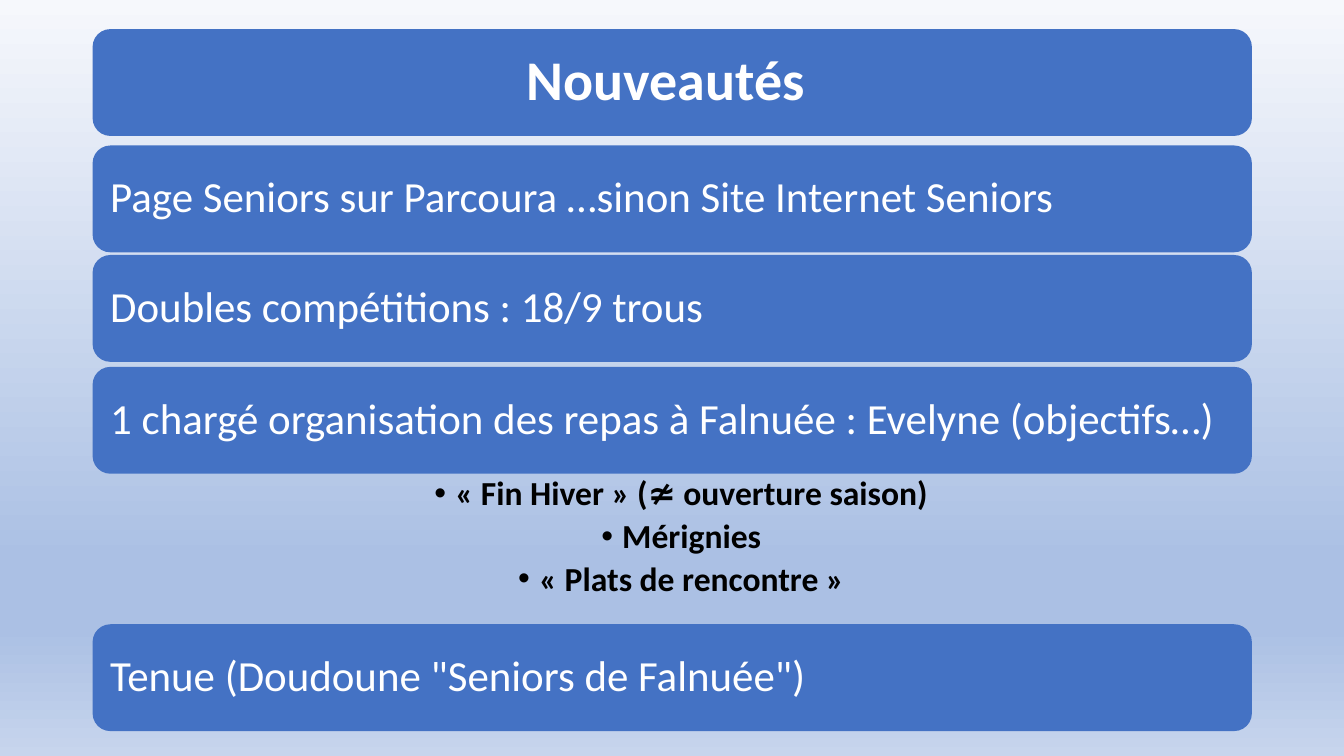
from dataclasses import dataclass

from lxml.etree import SubElement
from pptx import Presentation
from pptx.dml.color import RGBColor as Rgb
from pptx.enum.shapes import MSO_SHAPE as Preset
from pptx.enum.text import MSO_ANCHOR as Anchor, MSO_AUTO_SIZE as AutoSize, PP_ALIGN as Align
from pptx.oxml.ns import qn
from pptx.util import Cm, Pt


@dataclass(frozen=True)
class Theme:
    """Colours, font and type sizes of the slide."""
    font: str = "Calibri"
    band: str = "4472C4"
    light: str = "FFFFFF"
    dark: str = "000000"
    title_size: int = 60
    band_size: int = 46
    detail_size: int = 36
    backdrop: tuple = ((0, "F6F8FC"), (74, "ABC0E4"), (83, "ABC0E4"), (100, "C7D5ED"))


THEME = Theme()
LEFT, WIDTH, BAND_HEIGHT = Cm(3.5), Cm(43.82), Cm(4.04)


def paint_backdrop(slide):
    """Fill the slide background with the vertical theme gradient."""
    fill = slide.background.fill
    fill.gradient()
    fill.gradient_angle = 270
    stops = slide.element.find(".//" + qn("a:gsLst"))
    for stop in list(stops):
        stops.remove(stop)
    for percent, colour in THEME.backdrop:
        stop = SubElement(stops, qn("a:gs"), pos=str(percent * 1000))
        SubElement(stop, qn("a:srgbClr"), val=colour)


def place(shape, top, height):
    """Give a shape the common column's left edge and width."""
    shape.left, shape.top, shape.width, shape.height = LEFT, Cm(top), WIDTH, height


def write(shape, lines, *, size, colour, bold=False, align=Align.LEFT,
          anchor=Anchor.MIDDLE, insets=(0.47, 0.47, 0.47, 0.47), after=0, bulleted=False):
    """Write paragraphs in a shape; insets run left, top, right, bottom in cm."""
    frame = shape.text_frame
    frame.text = "\n".join(lines)
    frame.word_wrap = True
    frame.auto_size = AutoSize.NONE
    frame.vertical_anchor = anchor
    (frame.margin_left, frame.margin_top,
     frame.margin_right, frame.margin_bottom) = map(Cm, insets)
    for paragraph in frame.paragraphs:
        paragraph.alignment = align
        paragraph.line_spacing = 0.9
        paragraph.space_before = Pt(0)
        paragraph.space_after = Pt(after)
        if bulleted:
            paragraph.level = 1
            add_bullet(paragraph)
        for run in paragraph.runs:
            run.font.name = THEME.font
            run.font.size = Pt(size)
            run.font.bold = bold
            run.font.color.rgb = Rgb.from_string(colour)


def add_bullet(paragraph):
    """Give a paragraph a round bullet with a hanging indent."""
    properties = paragraph._p.get_or_add_pPr()
    properties.set("marL", str(Cm(0.79)))
    properties.set("indent", str(-Cm(0.79)))
    SubElement(properties, qn("a:buFont"), typeface="Arial")
    SubElement(properties, qn("a:buChar"), char="•")


def add_band(slide, top):
    """Add a plain rounded band and return it."""
    band = slide.shapes.add_shape(Preset.ROUNDED_RECTANGLE, LEFT, Cm(top), WIDTH, BAND_HEIGHT)
    band.shadow.inherit = False
    band.fill.solid()
    band.fill.fore_color.rgb = Rgb.from_string(THEME.band)
    band.line.fill.background()
    return band


def set_title(slide, text):
    """Lay the title placeholder over its own rounded band."""
    band = add_band(slide, 1.1)
    heading = slide.shapes.title
    place(heading, 1.1, BAND_HEIGHT)
    band.element.addnext(heading.element)
    write(heading, [text], size=THEME.title_size, colour=THEME.light, bold=True,
          align=Align.CENTER, insets=(0.82, 0.82, 0.82, 0.82))


def set_details(slide, lines):
    """Fill the body placeholder with the centred bullet list."""
    details = slide.placeholders[1]
    place(details, 17.89, Cm(5.15))
    write(details, lines, size=THEME.detail_size, colour=THEME.dark, bold=True,
          align=Align.CENTER, anchor=Anchor.TOP, insets=(1.39, 0.12, 0.71, 0.12),
          after=7, bulleted=True)


def main():
    """Build and save the news slide."""
    deck = Presentation()
    deck.slide_width, deck.slide_height = Cm(50.8), Cm(28.58)
    slide = deck.slides.add_slide(deck.slide_layouts[1])
    paint_backdrop(slide)
    set_title(slide, "Nouveautés ")
    for top, item in (
        (5.5, "Page Seniors sur Parcoura …sinon Site Internet Seniors"),
        (9.64, "Doubles compétitions : 18/9 trous"),
        (13.87, "1 chargé organisation des repas à Falnuée : Evelyne (objectifs…)"),
        (23.6, 'Tenue (Doudoune "Seniors de Falnuée")'),
    ):
        write(add_band(slide, top), [item], size=THEME.band_size, colour=THEME.light)
    set_details(slide, ["« Fin Hiver » (≄ ouverture saison)", "Mérignies", "« Plats de rencontre »"])
    deck.save("out.pptx")


if __name__ == "__main__":
    main()
